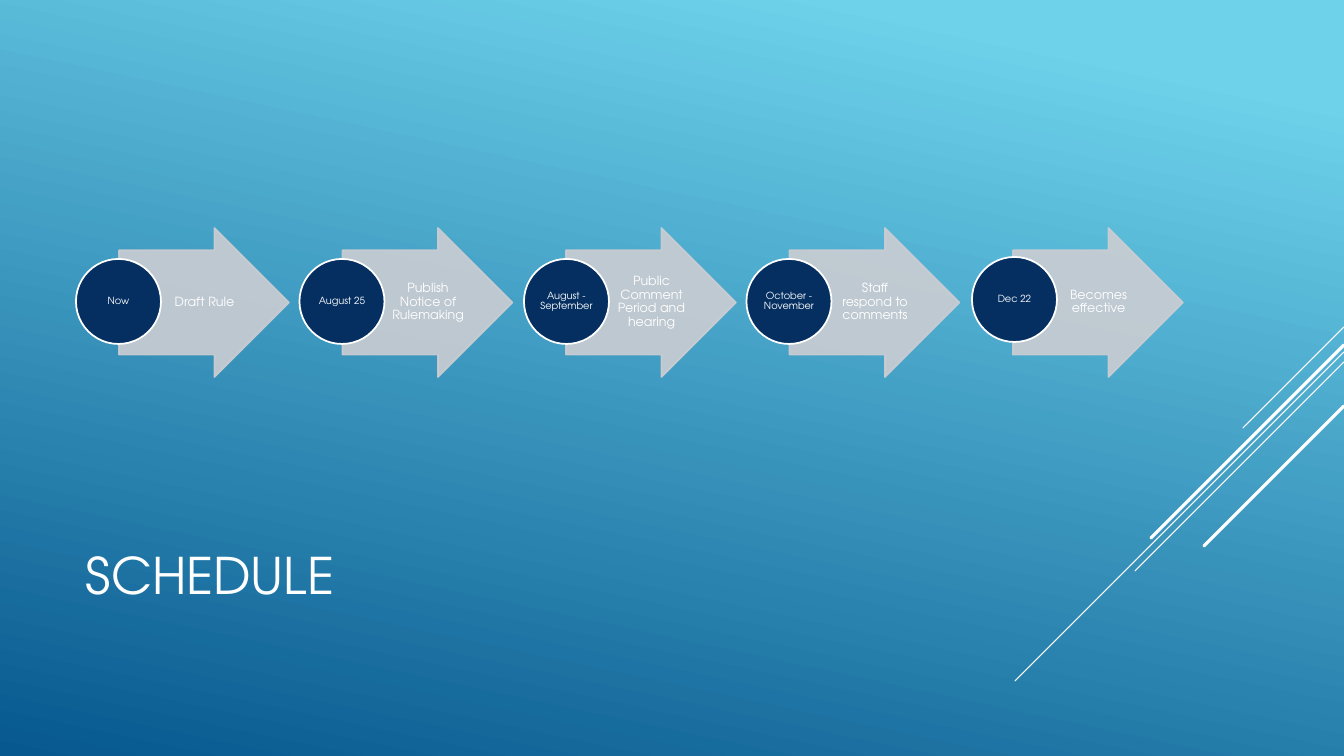
import pptx
import pptx.util
import pptx.dml.color
import pptx.enum.shapes
import pptx.enum.text
import lxml.etree
from pptx.oxml.ns import qn

PX = 914400 / 100.8
FONT = "TeX Gyre Adventor"
WHITE, NAVY, SILVER = "FFFFFF", "052F61", "CCCDD2"
SHAPE = pptx.enum.shapes.MSO_SHAPE
ALIGN = pptx.enum.text.PP_ALIGN

# Label in the circle, label in the arrow, circle shift (x, y)
STEPS = [
    ("Now", "Draft Rule", (0, 0)),
    ("August 25", "Publish Notice of Rulemaking", (0, 0)),
    ("August - September", "Public Comment Period and hearing", (1, 0)),
    ("October - November", "Staff respond to comments", (0, 0)),
    ("Dec 22", "Becomes effective", (2, -2)),
]

# Right-edge y, horizontal run, width in points; every line falls at 45 degrees
RAYS = [(327, 101, 0.75), (352, 329, 0.75), (362, 209, 0.75),
        (345, 193, 2.25), (406, 140, 2.25)]


def px(n):
    return pptx.util.Emu(round(n * PX))


def color(hex_string):
    return pptx.dml.color.RGBColor.from_string(hex_string)


def put_text(tf, text, size=9, align=ALIGN.CENTER, spacing=0.9, insets=(0, 0, 0, 0)):
    tf.word_wrap = True
    tf.auto_size = pptx.enum.text.MSO_AUTO_SIZE.NONE
    tf.vertical_anchor = pptx.enum.text.MSO_ANCHOR.MIDDLE
    tf.margin_left, tf.margin_top, tf.margin_right, tf.margin_bottom = map(px, insets)
    p = tf.paragraphs[0]
    p.alignment, p.line_spacing = align, spacing
    r = p.add_run()
    r.text = text
    r.font.name, r.font.size = FONT, pptx.util.Pt(size)
    r.font.color.rgb = color(WHITE)


def add_shape(s, kind, x, y, w, h, fill, line, opacity=100):
    sp = s.shapes.add_shape(kind, px(x), px(y), px(w), px(h))
    sp.shadow.inherit = False
    sp.fill.solid()
    sp.fill.fore_color.rgb = color(fill)
    sp.line.color.rgb = color(line)
    sp.line.width = pptx.util.Pt(1.25)
    if opacity < 100:
        for clr in sp._element.spPr.iter(qn("a:srgbClr")):
            lxml.etree.SubElement(clr, qn("a:alpha")).set("val", str(opacity * 1000))
    return sp


def add_background(s):
    fill = s.background.fill
    fill.gradient()
    fill.gradient_angle = 258
    for stop, (position, shade) in zip(fill.gradient_stops, [(0.1, "6ED2EB"), (1, "06588E")]):
        stop.position = position
        stop.color.rgb = color(shade)


def add_rays(s, right):
    for y, run, width in RAYS:
        line = s.shapes.add_connector(pptx.enum.shapes.MSO_CONNECTOR.STRAIGHT,
                                      px(right), px(y), px(right - run), px(y + run))
        line.line.color.rgb = color(WHITE)
        line.line.width = pptx.util.Pt(width)
        spPr = line._element.spPr
        spPr.find(qn("a:ln")).set("cap", "rnd")
        lxml.etree.SubElement(spPr, qn("a:effectLst"))


def add_title(s, x, y, w, h):
    title = s.shapes.title
    title.left, title.top, title.width, title.height = map(px, (x, y, w, h))
    put_text(title.text_frame, "SCHEDULE", size=36, align=ALIGN.LEFT,
             insets=(10, 5, 10, 5))


def add_step(s, x, y, date, task, shift):
    # Arrow
    arrow = add_shape(s, SHAPE.RIGHT_ARROW, x, y, 170, 149, SILVER, SILVER, opacity=90)
    arrow.adjustments[0], arrow.adjustments[1] = 0.7, 0.5
    # Task
    box = s.shapes.add_textbox(px(x + 43), px(y + 22), px(83), px(104))
    put_text(box.text_frame, task, insets=(3, 1, 1, 1))
    # Date
    dx, dy = shift
    circle = add_shape(s, SHAPE.OVAL, x - 43 + dx, y + 31 + dy, 85, 85, NAVY, WHITE)
    put_text(circle.text_frame, date, size=7)


def add_timeline(s, x, y, w):
    pitch = w / (len(STEPS) - 1)
    for i, (date, task, shift) in enumerate(STEPS):
        add_step(s, x + i * pitch, y, date, task, shift)


def main():
    prs = pptx.Presentation()
    prs.slide_width, prs.slide_height = px(1344), px(756)
    s = prs.slides.add_slide(prs.slide_layouts.get_by_name("Title Only"))
    add_background(s)
    add_rays(s, 1344)
    add_title(s, 76, 495, 940, 166)
    add_timeline(s, 119, 228, 894)
    prs.save("out.pptx")


if __name__ == "__main__":
    main()
